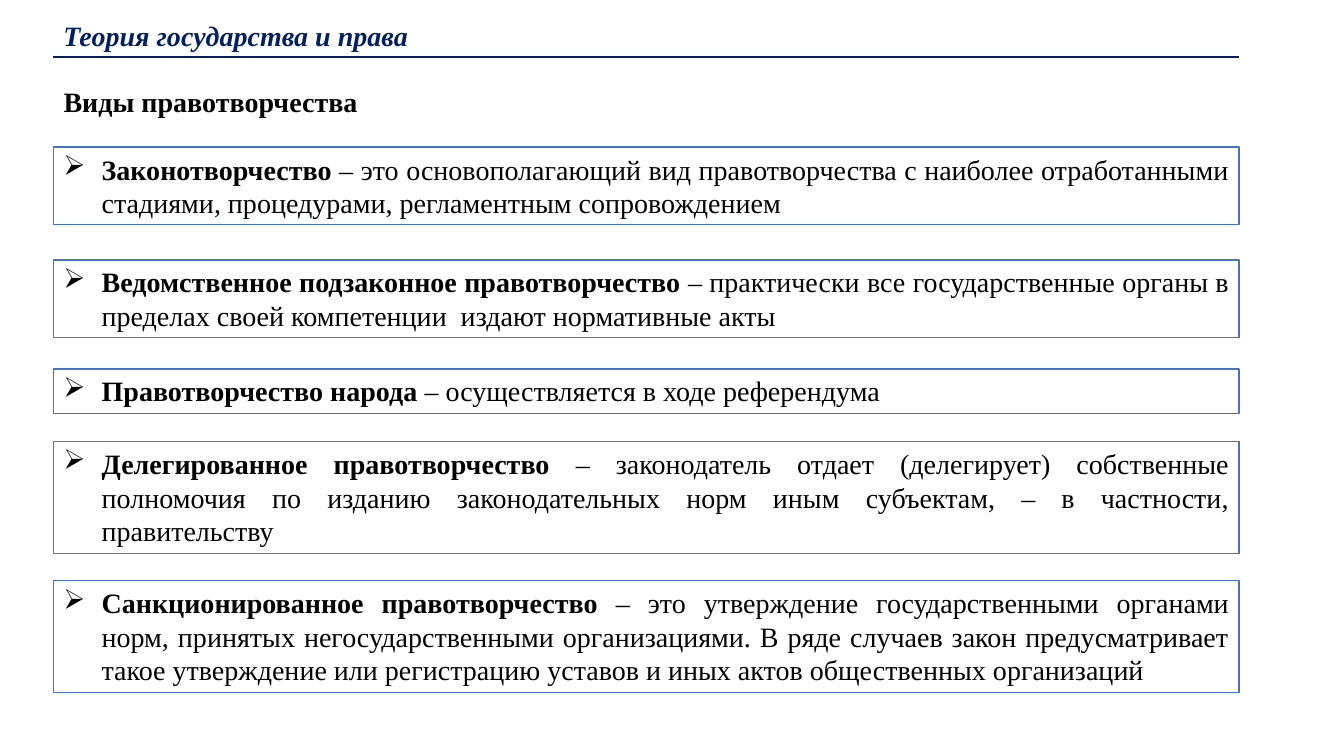
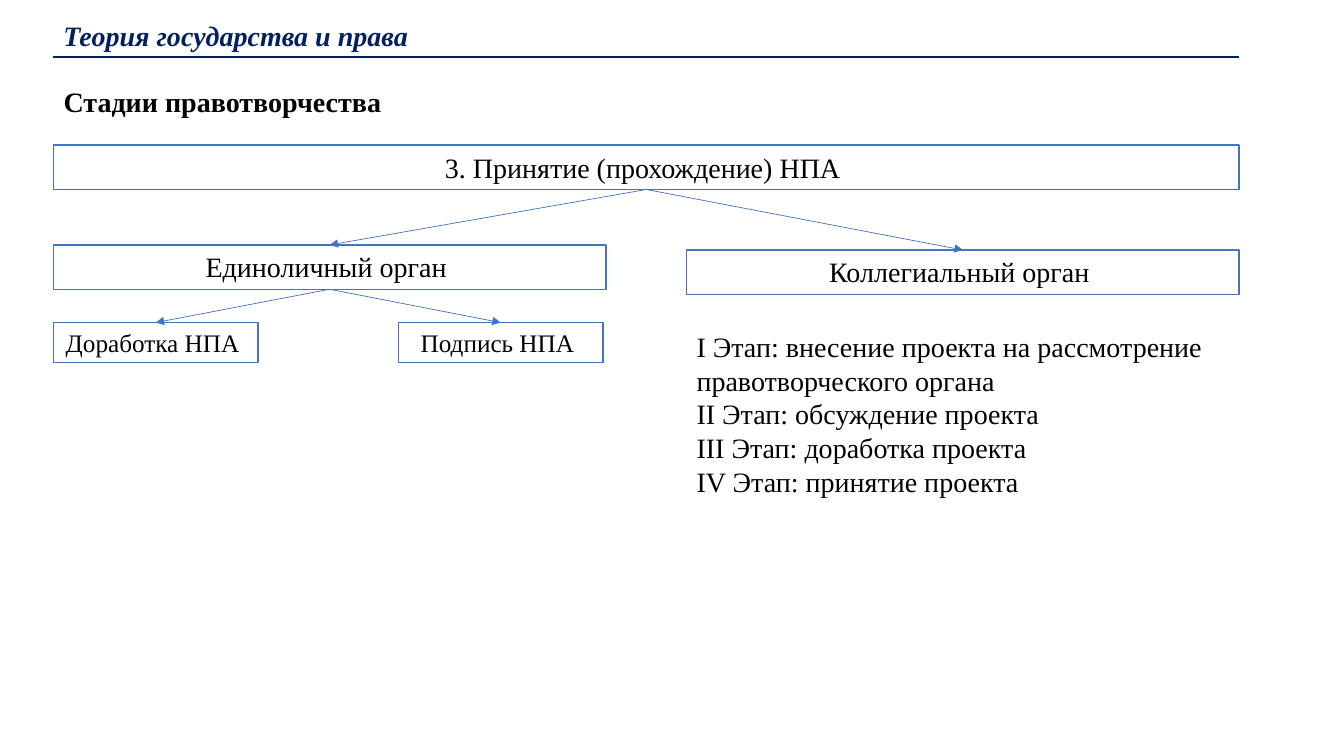
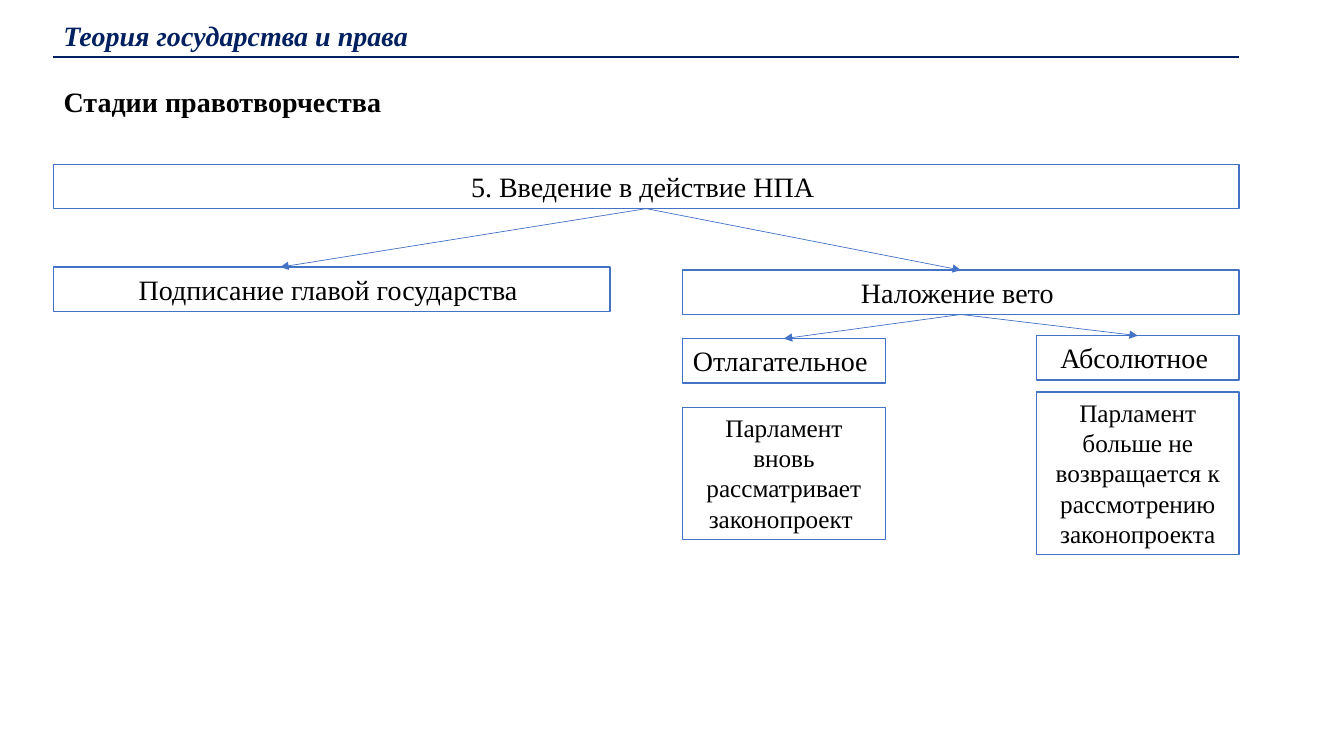
from pptx import Presentation
from pptx.dml.color import RGBColor
from pptx.enum.shapes import MSO_CONNECTOR as Connector, MSO_SHAPE as Preset
from pptx.enum.text import MSO_ANCHOR as Anchor, MSO_AUTO_SIZE as AutoSize, PP_ALIGN as Align
from pptx.oxml.ns import qn
from pptx.util import Inches, Pt
from lxml.etree import SubElement

# Shared style
FONT = "Times New Roman"
NAVY, BLUE, BLACK, WHITE = "002060", "4472C4", "000000", "FFFFFF"
LEFT, WIDTH = 0.53, 11.76
RIGHT = LEFT + WIDTH
TITLE_ONLY = 5
TOP, BOTTOM = 0, 2  # connection sites of a rectangle


def color(hex_text):
    return RGBColor.from_string(hex_text)


def text_height(lines, size=20):
    """Height in inches of a box with the given number of lines."""
    return round(0.1 + lines * size * 1.21 / 72, 2)


def place(shape, left, top, width, height):
    shape.left, shape.top = Inches(left), Inches(top)
    shape.width, shape.height = Inches(width), Inches(height)


def format_text(frame, size=20, ink=BLACK, align=Align.LEFT, bold=False, italic=False):
    frame.word_wrap = True
    frame.auto_size = AutoSize.SHAPE_TO_FIT_TEXT
    frame.vertical_anchor = Anchor.TOP
    frame.margin_left = frame.margin_right = Inches(0.1)
    frame.margin_top = frame.margin_bottom = Inches(0.05)
    for paragraph in frame.paragraphs:
        paragraph.alignment = align
        for run in paragraph.runs:
            font = run.font
            font.name, font.size = FONT, Pt(size)
            font.bold, font.italic = bold, italic
            font.color.rgb = color(ink)


def add_line(slide, start, end, ink, weight):
    """Straight line between two points given in inches."""
    line = slide.shapes.add_connector(
        Connector.STRAIGHT, *[Inches(value) for value in (*start, *end)])
    line.line.color.rgb = color(ink)
    line.line.width = Pt(weight)
    SubElement(line._element.spPr, qn("a:effectLst"))
    return line


def add_arrow(slide, parent, child, end=None):
    """Arrow from the parent's bottom to the child's top, or to a point."""
    arrow = add_line(slide, (0, 0), end or (0, 0), BLUE, 0.5)
    arrow.begin_connect(parent, BOTTOM)
    if end is None:
        arrow.end_connect(child, TOP)
    SubElement(arrow.line._get_or_add_ln(), qn("a:tailEnd"), type="triangle")


def add_box(slide, text, left, top, width, lines=1, size=20, align=Align.CENTER):
    box = slide.shapes.add_shape(
        Preset.RECTANGLE, Inches(left), Inches(top), Inches(width),
        Inches(text_height(lines, size)))
    box.shadow.inherit = False
    box.fill.solid()
    box.fill.fore_color.rgb = color(WHITE)
    box.line.color.rgb = color(BLUE)
    box.line.width = Pt(1)
    box.text_frame.text = text
    format_text(box.text_frame, size, align=align)
    return box


def add_definition(slide, term, meaning, top, lines):
    """Full-width box with a bulleted, bold term and its meaning."""
    box = add_box(slide, term, LEFT, top, WIDTH, lines)
    paragraph = box.text_frame.paragraphs[0]
    paragraph.add_run().text = meaning
    format_text(box.text_frame, align=Align.JUSTIFY)
    paragraph.runs[0].font.bold = True
    properties = paragraph._p.get_or_add_pPr()
    properties.set("marL", str(Inches(0.38)))
    properties.set("indent", str(-Inches(0.38)))
    SubElement(properties, qn("a:buChar"), char="➢")


def add_slide(deck, heading):
    """Slide with the course name, its rule and the heading."""
    slide = deck.slides.add_slide(deck.slide_layouts[TITLE_ONLY])
    title = slide.shapes.title
    place(title, LEFT, 0.79, WIDTH, text_height(1))
    title.text_frame.text = heading
    format_text(title.text_frame, bold=True)

    course = slide.shapes.add_textbox(0, 0, 0, 0)
    place(course, LEFT, 0.13, 3.71, text_height(1))
    course.text_frame.text = "Теория государства и права"
    format_text(course.text_frame, ink=NAVY, bold=True, italic=True)
    course.text_frame.word_wrap = False
    add_line(slide, (LEFT, 0.57), (RIGHT, 0.57), NAVY, 1.5)
    return slide


def kinds_slide(deck):
    slide = add_slide(deck, "Виды правотворчества")
    definitions = [
        (1.46, 2, "Законотворчество",
         " – это основополагающий вид правотворчества с наиболее отработанными "
         "стадиями, процедурами, регламентным сопровождением"),
        (2.58, 2, "Ведомственное подзаконное правотворчество ",
         "– практически все государственные органы в пределах своей "
         "компетенции  издают нормативные акты"),
        (3.66, 1, "Правотворчество народа ", "– осуществляется в ходе референдума"),
        (4.38, 3, "Делегированное правотворчество ",
         "– законодатель отдает (делегирует) собственные полномочия по изданию "
         "законодательных норм иным субъектам, – в частности, правительству"),
        (5.76, 3, "Санкционированное правотворчество ",
         "– это утверждение государственными органами норм, принятых "
         "негосударственными организациями. В ряде случаев закон предусматривает "
         "такое утверждение или регистрацию уставов и иных актов общественных "
         "организаций"),
    ]
    for top, lines, term, meaning in definitions:
        add_definition(slide, term, meaning, top, lines)


def adoption_slide(deck):
    slide = add_slide(deck, "Стадии правотворчества")
    body_width = 5.48
    body_left = RIGHT - body_width
    adoption = add_box(slide, "3. Принятие (прохождение) НПА ", LEFT, 1.44, WIDTH)
    single = add_box(slide, "Единоличный орган ", LEFT, 2.43, body_width)
    collegial = add_box(slide, "Коллегиальный орган ", body_left, 2.48, body_width)
    revision = add_box(slide, "Доработка НПА ", LEFT, 3.2, 2.03, size=18)
    signing = add_box(slide, "Подпись НПА ", 3.95, 3.2, 2.03, size=18)
    for parent, child in [(adoption, single), (adoption, collegial),
                          (single, revision), (single, signing)]:
        add_arrow(slide, parent, child)

    # Steps of the collegial body
    steps = slide.shapes.add_textbox(0, 0, 0, 0)
    place(steps, body_left, 3.22, body_width, text_height(5))
    steps.text_frame.text = "\n".join([
        "I Этап: внесение проекта на рассмотрение правотворческого органа",
        "II Этап: обсуждение проекта",
        "III Этап: доработка проекта",
        "IV Этап: принятие проекта",
    ])
    format_text(steps.text_frame)


def enactment_slide(deck):
    slide = add_slide(deck, "Стадии правотворчества")
    branch_width, veto_width = 5.52, 2.01
    branch_left, absolute_left = RIGHT - branch_width, RIGHT - veto_width
    enactment = add_box(slide, "5. Введение в действие НПА ", LEFT, 1.63, WIDTH)
    signature = add_box(slide, "Подписание главой государства ", LEFT, 2.65, branch_width)
    veto = add_box(slide, "Наложение вето ", branch_left, 2.68, branch_width)
    suspensive = add_box(slide, "Отлагательное ", branch_left, 3.36, veto_width)
    absolute = add_box(slide, "Абсолютное ", absolute_left, 3.33, veto_width)
    add_arrow(slide, enactment, signature, end=(2.78, 2.65))
    for parent, child in [(enactment, veto), (veto, suspensive), (veto, absolute)]:
        add_arrow(slide, parent, child)

    # Consequences of each veto
    add_box(slide, "Парламент больше не возвращается к рассмотрению законопроекта",
            absolute_left, 3.89, veto_width, lines=5, size=18)
    add_box(slide, "Парламент вновь рассматривает законопроект ",
            branch_left, 4.04, veto_width, lines=4, size=18)


def main():
    deck = Presentation()
    deck.slide_width, deck.slide_height = Inches(13.33), Inches(7.5)
    kinds_slide(deck)
    adoption_slide(deck)
    enactment_slide(deck)
    deck.save("out.pptx")


if __name__ == "__main__":
    main()
